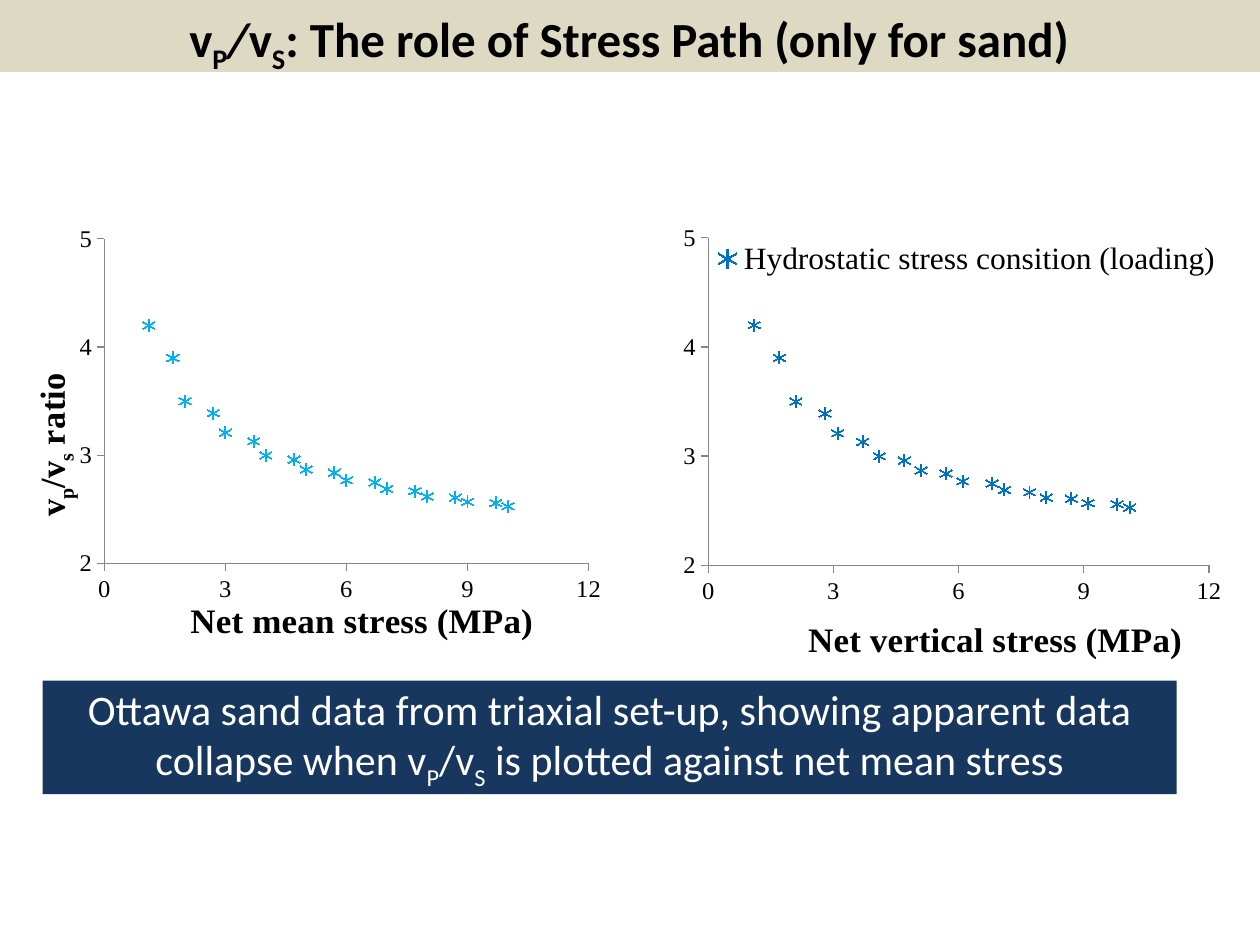
from lxml.etree import SubElement, Element
from pptx import Presentation
from pptx.chart.data import XyChartData
from pptx.dml.color import RGBColor as Rgb
from pptx.enum.chart import XL_CHART_TYPE as ChartType, XL_LEGEND_POSITION as LegendPosition
from pptx.enum.chart import XL_MARKER_STYLE as MarkerStyle, XL_TICK_MARK as TickMark
from pptx.enum.shapes import MSO_SHAPE as Preset
from pptx.enum.text import MSO_ANCHOR as Anchor, PP_ALIGN as Align
from pptx.oxml.ns import qn
from pptx.util import Cm, Pt

THEME = {
    "sans": "Calibri", "serif": "Times New Roman",
    "band": "DDD9C3", "banner": "17375E", "dark": "000000", "light": "FFFFFF", "axis": "868686",
    "title": 28, "body": 24, "axis_title": 20, "legend": 18, "tick": 14,
}

# Content: text runs are (text, style), with style "sub", "italic" or ""
TITLE = [("v", ""), ("P", "sub"), ("/", "italic"), ("v", ""), ("S", "sub"),
         (": The role of Stress Path (only for sand)", "")]
BANNER = [("Ottawa sand data from triaxial set-up, showing apparent data collapse when v", ""),
          ("P", "sub"), ("/v", ""), ("S", "sub"), (" is plotted against net mean stress", "")]
RATIO = [("v", ""), ("p", "sub"), ("/v", ""), ("s", "sub"), (" ratio", "")]
RATIO_VALUES = [4.2, 3.9, 3.5, 3.39, 3.21, 3.13, 3, 2.96, 2.87, 2.84,
                2.77, 2.75, 2.69, 2.67, 2.62, 2.61, 2.57, 2.56, 2.53]

# Boxes are in cm; layouts are fractions of the chart
CHARTS = [
    {"box": (0.3, 4.52, 12.19, 8.61), "plot": (0.148, 0.035, 0.801, 0.777), "color": "00B0F0",
     "name": "Series 1", "x_title": "Net mean stress (MPa)", "x_title_at": (0.28, 0.88),
     "y_title": RATIO, "y_title_at": (0.02, 0.35), "legend_at": None,
     "stress": [1.1, 1.7, 2, 2.7, 3, 3.7, 4, 4.7, 5, 5.7,
                6, 6.7, 7, 7.7, 8, 8.7, 9, 9.7, 10]},
    {"box": (12.9, 4.52, 12.09, 8.99), "plot": (0.114, 0.027, 0.835, 0.749), "color": "0070C0",
     "name": "Hydrostatic stress consition (loading)",
     "x_title": "Net vertical stress (MPa)", "x_title_at": (0.27, 0.88),
     "y_title": None, "y_title_at": None, "legend_at": (0.11, 0.03, 0.87, 0.09),
     "stress": [1.1, 1.7, 2.1, 2.8, 3.1, 3.7, 4.1, 4.7, 5.1, 5.7,
                6.1, 6.8, 7.1, 7.7, 8.1, 8.7, 9.1, 9.8, 10.1]},
]


def color(name):
    return Rgb.from_string(THEME[name])


def write(paragraph, runs, font_name, size, ink, bold=False):
    for text, style in runs:
        run = paragraph.add_run()
        run.text = text
        if style == "italic":
            run.font.italic = True
        elif style == "sub":
            run._r.get_or_add_rPr().set("baseline", "-25000")
    font = paragraph.font
    font.name, font.size, font.bold = font_name, Pt(THEME[size]), bold
    font.color.rgb = color(ink)
    paragraph.alignment = Align.CENTER


def add_block(slide, box, fill):
    block = slide.shapes.add_shape(Preset.RECTANGLE, *map(Cm, box))
    block.shadow.inherit = False
    block.fill.solid()
    block.fill.fore_color.rgb = color(fill)
    block.line.fill.background()
    return block


def set_layout(parent, index, fractions, inner=False):
    """Give a chart part a manual layout, as its child at the given index."""
    for old in parent.findall(qn("c:layout")):
        parent.remove(old)
    layout = Element(qn("c:layout"))
    parent.insert(index, layout)
    manual = SubElement(layout, qn("c:manualLayout"))
    settings = [("layoutTarget", "inner")] if inner else []
    settings += [("xMode", "edge"), ("yMode", "edge")]
    settings += zip("xywh", fractions)
    for tag, value in settings:
        SubElement(manual, qn("c:" + tag)).set("val", str(value))


def style_axis(axis, low, high, step):
    axis.minimum_scale, axis.maximum_scale, axis.major_unit = low, high, step
    axis.has_major_gridlines = False
    axis.major_tick_mark, axis.minor_tick_mark = TickMark.OUTSIDE, TickMark.NONE
    axis.tick_labels.font.size = Pt(THEME["tick"])
    axis.tick_labels.number_format = "General"
    axis.tick_labels.number_format_is_linked = False
    axis.format.line.color.rgb = color("axis")
    axis.format.line.width = Pt(0.75)


def title_axis(axis, runs, position, rotation):
    frame = axis.axis_title.text_frame
    write(frame.paragraphs[0], runs, THEME["serif"], "axis_title", "dark", bold=True)
    frame._txBody.bodyPr.set("rot", str(rotation))
    frame._txBody.bodyPr.set("vert", "horz")
    set_layout(axis.axis_title._element, 1, position)


def add_scatter(slide, item):
    data = XyChartData()
    points = data.add_series(item["name"])
    for stress, ratio in zip(item["stress"], RATIO_VALUES):
        points.add_data_point(stress, ratio)
    chart = slide.shapes.add_chart(ChartType.XY_SCATTER, *map(Cm, item["box"]), data).chart
    chart.has_title = False
    chart.font.name, chart.font.size = THEME["serif"], Pt(THEME["tick"])
    chart.font.color.rgb = color("dark")

    # Markers only
    plot = chart.plots[0]
    plot.vary_by_categories = False
    series = plot.series[0]
    series.format.line.fill.background()
    series.marker.style, series.marker.size = MarkerStyle.STAR, 7
    series.marker.format.fill.background()
    series.marker.format.line.color.rgb = Rgb.from_string(item["color"])

    # Axes
    style_axis(chart.category_axis, 0, 12, 3)
    style_axis(chart.value_axis, 2, 5, 1)
    title_axis(chart.category_axis, [(item["x_title"], "")], item["x_title_at"], 0)
    if item["y_title"]:
        title_axis(chart.value_axis, item["y_title"], item["y_title_at"], -5400000)
    set_layout(chart._chartSpace.chart.plotArea, 0, item["plot"], inner=True)

    # Legend
    chart.has_legend = item["legend_at"] is not None
    if chart.has_legend:
        legend = chart.legend
        legend.position, legend.include_in_layout = LegendPosition.RIGHT, False
        legend.font.size = Pt(THEME["legend"])
        set_layout(legend._element, 1, item["legend_at"])


def main():
    presentation = Presentation()
    presentation.slide_width, presentation.slide_height = Cm(25.4), Cm(19.05)
    slide = presentation.slides.add_slide(presentation.slide_layouts[6])

    # Title on its band
    add_block(slide, (0, 0, 25.4, 1.45), "band")
    title = slide.shapes.add_textbox(*map(Cm, (0.03, 0.05, 25.3, 1.45)))
    title.text_frame.word_wrap = True
    write(title.text_frame.paragraphs[0], TITLE, THEME["sans"], "title", "dark", bold=True)

    # Finding
    banner = add_block(slide, (0.86, 13.72, 22.86, 2.29), "banner")
    banner.text_frame.word_wrap = True
    banner.text_frame.vertical_anchor = Anchor.MIDDLE
    write(banner.text_frame.paragraphs[0], BANNER, THEME["sans"], "body", "light")

    # Ratio against each stress
    for item in CHARTS:
        add_scatter(slide, item)

    presentation.save("out.pptx")


if __name__ == "__main__":
    main()
